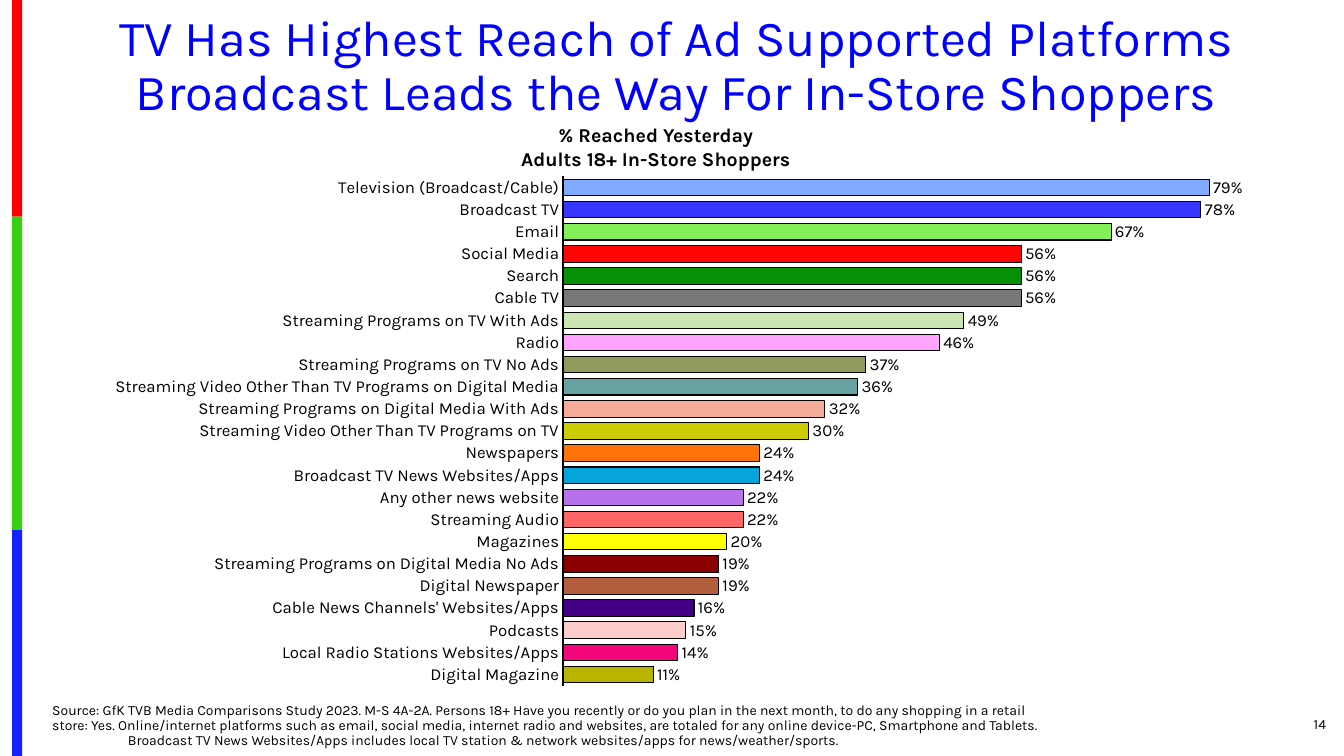
from lxml.etree import SubElement
from pptx import Presentation
from pptx.chart.data import CategoryChartData
from pptx.dml.color import RGBColor
from pptx.enum.chart import XL_CHART_TYPE, XL_LABEL_POSITION, XL_TICK_MARK
from pptx.enum.shapes import MSO_SHAPE
from pptx.enum.text import MSO_ANCHOR, PP_ALIGN
from pptx.oxml.ns import qn
from pptx.util import Inches, Pt

FONT = "Karla"
BLACK = "000000"

STRIPE = [("FE0000", 2.15), ("36CF12", 3.11), ("1322FE", 2.24)]

TITLE = ("TV Has Highest Reach of Ad Supported Platforms "
         "Broadcast Leads the Way For In-Store Shoppers")
SUBTITLE = ["% Reached Yesterday", "Adults 18+ In-Store Shoppers"]
SOURCE = [
    "Source: GfK TVB Media Comparisons Study 2023.\u00a0M-S 4A-2A. Persons 18+ Have you recently "
    "or do you plan in the next month, to do any shopping in a retail store: Yes. "
    "Online/internet platforms such as email, social media, internet radio and websites, "
    "are totaled for any online device-PC, Smartphone and Tablets.",
    "Broadcast TV News Websites/Apps includes local TV station & network websites/apps "
    "for news/weather/sports.",
]

REACH = [
    ("Television (Broadcast/Cable)", 0.79, "80ABFF"),
    ("Broadcast TV", 0.78, "3636FF"),
    ("Email", 0.67, "84F058"),
    ("Social Media", 0.56, "FF0505"),
    ("Search", 0.56, "059005"),
    ("Cable TV", 0.56, "787878"),
    ("Streaming Programs on TV With Ads", 0.49, "CCE6B2"),
    ("Radio", 0.46, "FFA4FF"),
    ("Streaming Programs on TV No Ads", 0.37, "909C5E"),
    ("Streaming Video Other Than TV Programs on Digital Media", 0.36, "67A1A1"),
    ("Streaming Programs on Digital Media With Ads", 0.32, "F5AD99"),
    ("Streaming Video Other Than TV Programs on TV", 0.3, "CCCC00"),
    ("Newspapers", 0.24, "FF730A"),
    ("Broadcast TV News Websites/Apps", 0.24, "05A4D9"),
    ("Any other news website", 0.22, "B671EB"),
    ("Streaming Audio", 0.22, "FF6666"),
    ("Magazines", 0.2, "FFFF05"),
    ("Streaming Programs on Digital Media No Ads", 0.19, "8A0000"),
    ("Digital Newspaper", 0.19, "B25E3C"),
    ("Cable News Channels' Websites/Apps", 0.16, "430086"),
    ("Podcasts", 0.15, "FFCCCC"),
    ("Local Radio Stations Websites/Apps", 0.14, "F3057C"),
    ("Digital Magazine", 0.11, "B8B400"),
]


def color(hex_code):
    return RGBColor.from_string(hex_code)


def style(font, size, hex_code=BLACK, bold=False):
    font.name = FONT
    font.size = Pt(size)
    font.bold = bold
    font.color.rgb = color(hex_code)


def add_text(slide, box, lines, size, hex_code=BLACK, bold=False,
             align=PP_ALIGN.LEFT, anchor=MSO_ANCHOR.TOP, spacing=1.0):
    """Place one paragraph per line in the box and return its text frame."""
    frame = slide.shapes.add_textbox(*map(Inches, box)).text_frame
    frame.word_wrap = True
    frame.vertical_anchor = anchor
    frame.text = "\n".join(lines)
    for paragraph in frame.paragraphs:
        paragraph.alignment = align
        paragraph.line_spacing = spacing
        for run in paragraph.runs:
            style(run.font, size, hex_code, bold)
    return frame


def add_stripe(slide, left, top, width):
    for hex_code, height in STRIPE:
        band = slide.shapes.add_shape(
            MSO_SHAPE.RECTANGLE, *map(Inches, (left, top, width, height)))
        band.shadow.inherit = False
        band.fill.solid()
        band.fill.fore_color.rgb = color(hex_code)
        band.line.fill.background()
        top += height


def add_source(slide, box):
    frame = add_text(slide, box, SOURCE, 10, anchor=MSO_ANCHOR.BOTTOM, spacing=0.9)
    frame.paragraphs[-1]._p.get_or_add_pPr().set("marL", str(Inches(0.75)))


def set_plot_layout(chart, x, y, w, h):
    """Fix the inner plot area, in fractions of the chart."""
    plot_area = chart._chartSpace.chart.plotArea
    for old in plot_area.findall(qn("c:layout")):
        plot_area.remove(old)
    layout = SubElement(plot_area, qn("c:layout"))
    plot_area.insert(0, layout)
    manual = SubElement(layout, qn("c:manualLayout"))
    settings = [("layoutTarget", "inner"), ("xMode", "edge"), ("yMode", "edge"),
                ("x", x), ("y", y), ("w", w), ("h", h)]
    for tag, value in settings:
        SubElement(manual, qn(f"c:{tag}")).set("val", str(value))


def add_reach_chart(slide, box):
    platforms, shares, _ = zip(*REACH)
    reach_data = CategoryChartData(number_format="0%")
    reach_data.categories = platforms
    reach_data.add_series("Series 1", shares)
    chart = slide.shapes.add_chart(
        XL_CHART_TYPE.BAR_CLUSTERED, *map(Inches, box), reach_data).chart
    chart.has_legend = False
    chart.has_title = False
    style(chart.font, 10)
    set_plot_layout(chart, 0.413, 0.047, 0.565, 0.946)

    platform_axis = chart.category_axis
    platform_axis.reverse_order = True
    platform_axis.major_tick_mark = XL_TICK_MARK.NONE
    platform_axis.format.line.color.rgb = color(BLACK)
    platform_axis.format.line.width = Pt(1.5)
    style(platform_axis.tick_labels.font, 12)

    share_axis = chart.value_axis
    share_axis.minimum_scale = 0
    share_axis.maximum_scale = 0.9
    share_axis.has_major_gridlines = False
    share_axis.visible = False

    plot = chart.plots[0]
    plot.gap_width = 34
    plot.vary_by_categories = False
    plot.has_data_labels = True
    labels = plot.data_labels
    labels.show_value = True
    labels.number_format = "0%"
    labels.number_format_is_linked = False
    labels.position = XL_LABEL_POSITION.OUTSIDE_END
    style(labels.font, 12)

    for index, (_, _, hex_code) in enumerate(REACH):
        bar = plot.series[0].points[index].format
        bar.fill.solid()
        bar.fill.fore_color.rgb = color(hex_code)
        bar.line.color.rgb = color(BLACK)
        bar.line.width = Pt(0.75)


def main():
    deck = Presentation()
    deck.slide_width = Inches(13.33)
    deck.slide_height = Inches(7.5)
    slide = deck.slides.add_slide(deck.slide_layouts[6])

    add_stripe(slide, 0.12, 0, 0.1)
    add_text(slide, (0.5, 0.08, 12.42, 1.19), [TITLE], 36, "0000FF",
             align=PP_ALIGN.CENTER, spacing=0.9)
    add_text(slide, (12.17, 6.98, 1.08, 0.4), ["14"], 10,
             align=PP_ALIGN.RIGHT, anchor=MSO_ANCHOR.MIDDLE)
    add_source(slide, (0.42, 6.92, 10.17, 0.56))
    add_text(slide, (3.17, 1.17, 6.67, 0.57), SUBTITLE, 14, bold=True,
             align=PP_ALIGN.CENTER)
    add_reach_chart(slide, (0.25, 1.5, 12.92, 5.34))
    deck.save("out.pptx")


if __name__ == "__main__":
    main()
